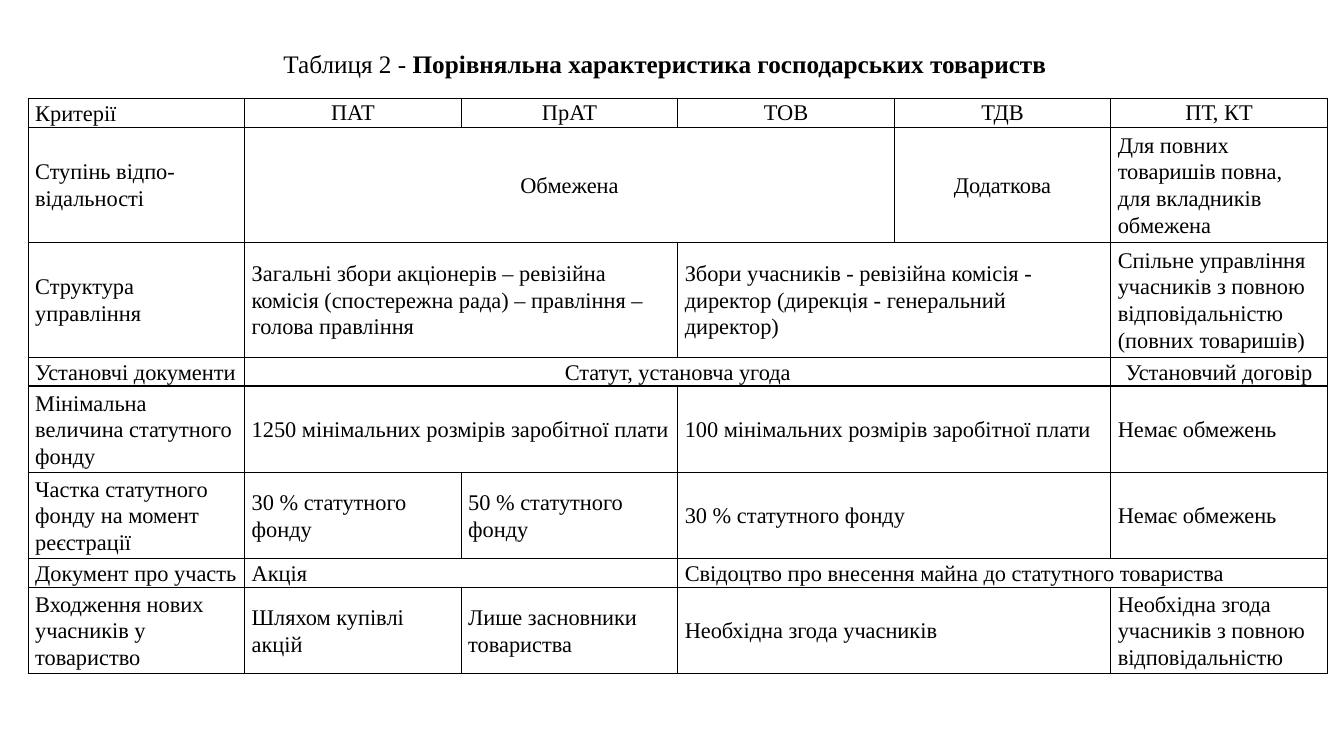
"""Builds a slide with a table comparing types of business companies."""
from lxml import etree
from pptx import Presentation
from pptx.dml.color import RGBColor
from pptx.enum.text import MSO_ANCHOR, MSO_AUTO_SIZE, PP_ALIGN
from pptx.oxml.ns import qn
from pptx.util import Pt

BLACK = RGBColor(0, 0, 0)
LEFT, CENTER, RIGHT = PP_ALIGN.LEFT, PP_ALIGN.CENTER, PP_ALIGN.RIGHT
TOP, MIDDLE = MSO_ANCHOR.TOP, MSO_ANCHOR.MIDDLE
GROW = MSO_AUTO_SIZE.SHAPE_TO_FIT_TEXT

COLUMNS = 6
COLUMN_WIDTH = 154.68
LINE_HEIGHT = 20.53
LINES_PER_ROW = [1, 4, 4, 1, 3, 3, 1, 3]
CELL_FORMAT = {"margin_left": Pt(5), "margin_right": Pt(5), "margin_top": 0, "margin_bottom": 0}

TITLE = [("Таблиця 2 - ", False),
         ("Порівняльна характеристика господарських товариств", True)]
HEADINGS = ["ПАТ", "ПрАТ", "ТОВ", "ТДВ", "ПТ, КТ"]
COMPARISON = [
    [("Критерії", 1, LEFT)] + [(heading, 1, CENTER) for heading in HEADINGS],
    [("Ступінь відпо-відальності", 1, LEFT),
     ("Обмежена", 3, CENTER),
     ("Додаткова", 1, CENTER),
     ("Для повних товаришів повна, для вкладників обмежена", 1, LEFT)],
    [("Структура управління", 1, LEFT),
     ("Загальні збори акціонерів – ревізійна комісія (спостережна рада) – "
      "правління – голова правління", 2, LEFT),
     ("Збори учасників - ревізійна комісія - директор (дирекція - "
      "генеральний директор)", 2, LEFT),
     ("Спільне управління учасників з повною відповідальністю "
      "(повних товаришів)", 1, LEFT)],
    [("Установчі документи", 1, LEFT),
     ("Статут, установча угода", 4, CENTER),
     ("Установчий договір", 1, CENTER)],
    [("Мінімальна величина статутного фонду", 1, LEFT),
     ("1250 мінімальних розмірів заробітної плати", 2, LEFT),
     ("100 мінімальних розмірів заробітної плати", 2, LEFT),
     ("Немає обмежень", 1, LEFT)],
    [("Частка статутного фонду на момент реєстрації", 1, LEFT),
     ("30 % статутного фонду", 1, LEFT),
     ("50 % статутного фонду", 1, LEFT),
     ("30 % статутного фонду", 2, LEFT),
     ("Немає обмежень", 1, LEFT)],
    [("Документ про участь", 1, LEFT),
     ("Акція", 2, LEFT),
     ("Свідоцтво про внесення майна до статутного товариства", 3, LEFT)],
    [("Входження нових учасників у товариство", 1, LEFT),
     ("Шляхом купівлі акцій", 1, LEFT),
     ("Лише засновники товариства", 1, LEFT),
     ("Необхідна згода учасників", 2, LEFT),
     ("Необхідна згода учасників з повною відповідальністю", 1, LEFT)],
]


class SlideBuilder:
    """Holds the text style and the current slide."""

    def __init__(self, slide, font_name, color):
        self.slide = slide
        self.font_name = font_name
        self.color = color

    def fill_paragraph(self, paragraph, runs, size, align, spacing):
        """Fill a paragraph with (text, bold) runs."""
        paragraph.alignment = align
        paragraph.line_spacing = spacing
        for text, bold in runs:
            run = paragraph.add_run()
            run.text = text
            look = {"name": self.font_name, "size": Pt(size), "bold": bold}
            for name, value in look.items():
                setattr(run.font, name, value)
            run.font.color.rgb = self.color

    def title(self, runs, left, top, width, height):
        """Add the right-aligned table caption."""
        caption = self.slide.shapes.add_textbox(Pt(left), Pt(top), Pt(width), Pt(height))
        caption.text_frame.word_wrap = True
        caption.text_frame.auto_size = GROW
        self.fill_paragraph(caption.text_frame.paragraphs[0], runs, 18, RIGHT, 1.15)

    def outline(self, cell):
        """Draw all four borders of a cell and clear its fill."""
        properties = cell._tc.get_or_add_tcPr()
        for side in ("a:lnL", "a:lnR", "a:lnT", "a:lnB"):
            line = etree.SubElement(properties, qn(side), w=str(Pt(1)))
            fill = etree.SubElement(line, qn("a:solidFill"))
            etree.SubElement(fill, qn("a:srgbClr"), val=str(self.color))
        cell.fill.background()

    def table(self, rows, left, top):
        """Add a bordered table from rows of (text, span, alignment)."""
        table = self.slide.shapes.add_table(
            len(rows), COLUMNS, Pt(left), Pt(top),
            Pt(COLUMNS * COLUMN_WIDTH), Pt(sum(LINES_PER_ROW) * LINE_HEIGHT)).table
        table.first_row = table.horz_banding = False
        for column in table.columns:
            column.width = Pt(COLUMN_WIDTH)
        for row, lines in zip(table.rows, LINES_PER_ROW):
            row.height = Pt(lines * LINE_HEIGHT)
        for cell in table.iter_cells():
            for name, value in CELL_FORMAT.items():
                setattr(cell, name, value)
            self.outline(cell)
        for row_index, entries in enumerate(rows):
            column_index = 0
            for text, span, align in entries:
                cell = table.cell(row_index, column_index)
                if span > 1:
                    cell.merge(table.cell(row_index, column_index + span - 1))
                cell.vertical_anchor = TOP if row_index == 0 and column_index else MIDDLE
                self.fill_paragraph(cell.text_frame.paragraphs[0], [(text, False)], 16, align, 1.07)
                column_index += span


def main():
    """Build and save the slide."""
    presentation = Presentation()
    presentation.slide_width, presentation.slide_height = Pt(960), Pt(540)
    slide = presentation.slides.add_slide(presentation.slide_layouts[6])
    builder = SlideBuilder(slide, "Times New Roman", BLACK)
    builder.title(TITLE, 92, 28, 662.5, 31)
    builder.table(COMPARISON, 20.16, 70.4)
    presentation.save("out.pptx")


if __name__ == "__main__":
    main()
